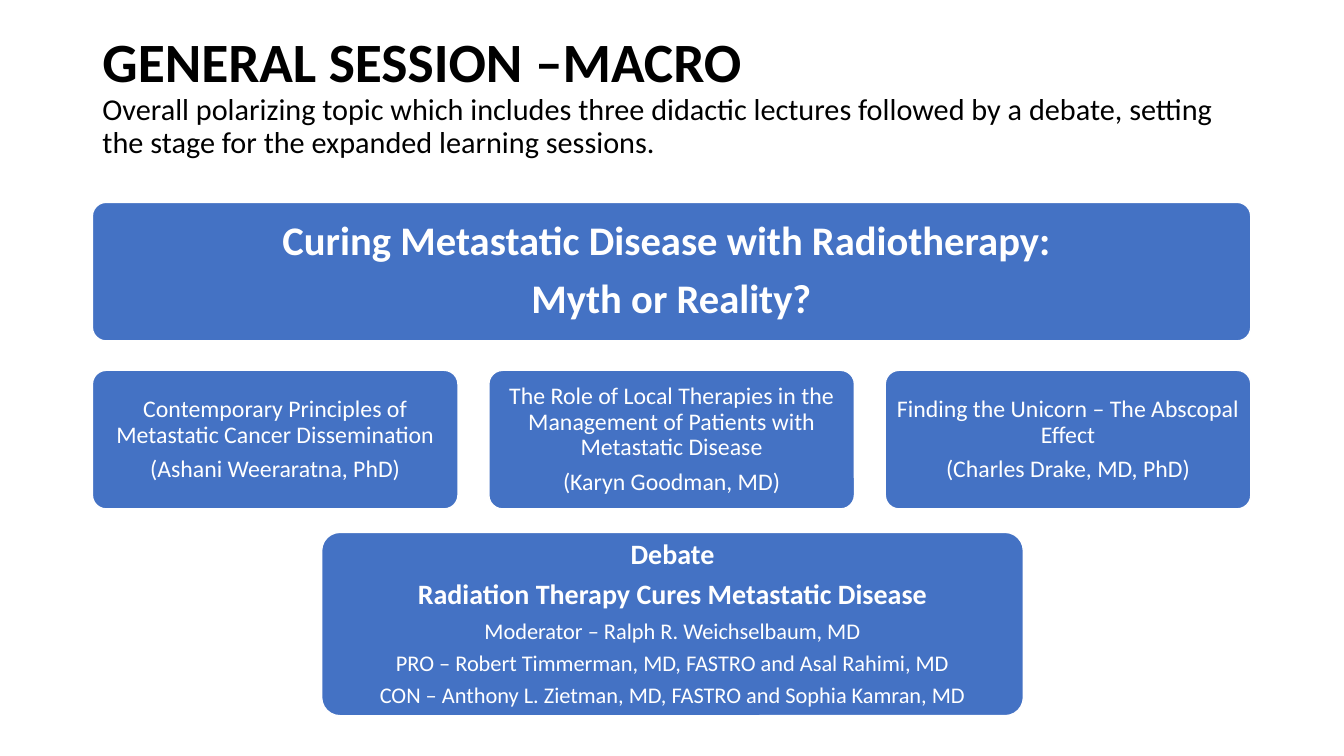
import pptx
import pptx.util
import pptx.dml.color
import pptx.enum.shapes
import pptx.enum.text
import pptx.oxml.ns
import lxml.etree

Pt = pptx.util.Pt
PP_ALIGN = pptx.enum.text.PP_ALIGN
ANCHOR = pptx.enum.text.MSO_ANCHOR


def rgb(value):
    return pptx.dml.color.RGBColor.from_string(value)


def add_run(p, text, size, bold, color):
    r = p.add_run()
    r.text = text
    for name, value in dict(name="Calibri", size=Pt(size), bold=bold).items():
        setattr(r.font, name, value)
    r.font.color.rgb = rgb(color)


prs = pptx.Presentation()
prs.slide_width, prs.slide_height = Pt(960), Pt(540)
s = prs.slides.add_slide(prs.slide_layouts[5])

# Title with its description
LEFT, WIDTH = 66, 827.5
title = s.shapes.title
title.left, title.top, title.width, title.height = Pt(LEFT), Pt(28.75), Pt(828), Pt(82)
tf = title.text_frame
frame_format = dict(word_wrap=True, vertical_anchor=ANCHOR.MIDDLE,
                    auto_size=pptx.enum.text.MSO_AUTO_SIZE.NONE)
for name, value in frame_format.items():
    setattr(tf, name, value)
p = tf.paragraphs[0]
p.alignment, p.line_spacing = PP_ALIGN.LEFT, 0.9
add_run(p, "GENERAL SESSION –MACRO", 39.6, True, "000000")
p.add_line_break()
# The break takes the size of the heading
lxml.etree.SubElement(p._p[-1], pptx.oxml.ns.qn("a:rPr"), sz="3960", b="1")
add_run(p, "Overall polarizing topic which includes three didactic lectures followed by "
        "a debate, setting the stage for the expanded learning sessions.",
        21.6, False, "000000")

# Boxes: left, top, width, height, inset, paragraphs (text, size, bold)
boxes = [
    (LEFT, 144.5, WIDTH, 99, 8.7, [
        ("Curing Metastatic Disease with Radiotherapy: ", 29, True),
        ("Myth or Reality?", 29, True)]),
    (229.75, 380.25, 501.25, 131, 6, [
        ("Debate", 20, True),
        ("Radiation Therapy Cures Metastatic Disease", 20, True),
        ("Moderator – Ralph R. Weichselbaum, MD", 16, False),
        ("PRO – Robert Timmerman, MD, FASTRO and Asal Rahimi, MD", 16, False),
        ("CON – Anthony L. Zietman, MD, FASTRO and Sophia Kamran, MD", 16, False)]),
]

# The three lectures share one row
lectures = [
    ("Contemporary Principles of Metastatic Cancer Dissemination",
     "(Ashani Weeraratna, PhD)"),
    ("The Role of Local Therapies in the Management of Patients with Metastatic Disease",
     "(Karyn Goodman, MD)"),
    ("Finding the Unicorn – The Abscopal Effect", "(Charles Drake, MD, PhD)"),
]
GAP = 22
lecture_width = (WIDTH - 2 * GAP) / 3
for i, lines in enumerate(lectures):
    boxes.insert(1 + i, (LEFT + i * (lecture_width + GAP), 264.5, lecture_width, 99, 5,
                         [(text, 17, False) for text in lines]))

# Draw every box with its text
for left, top, width, height, inset, lines in boxes:
    sp = s.shapes.add_shape(pptx.enum.shapes.MSO_SHAPE.ROUNDED_RECTANGLE,
                            Pt(left), Pt(top), Pt(width), Pt(height))
    sp.adjustments[0] = 0.1
    sp.shadow.inherit = False
    sp.fill.solid()
    sp.fill.fore_color.rgb = rgb("4472C4")
    sp.line.color.rgb = rgb("FFFFFF")
    sp.line.width = Pt(1)
    tf = sp.text_frame
    margins = {f"margin_{side}": Pt(inset) for side in ("left", "top", "right", "bottom")}
    for name, value in {**frame_format, **margins}.items():
        setattr(tf, name, value)
    for i, (text, size, bold) in enumerate(lines):
        p = tf.add_paragraph() if i else tf.paragraphs[0]
        para_format = dict(alignment=PP_ALIGN.CENTER, line_spacing=0.9,
                           space_after=Pt(0.35 * size))
        for name, value in para_format.items():
            setattr(p, name, value)
        add_run(p, text, size, bold, "FFFFFF")

prs.save("out.pptx")
